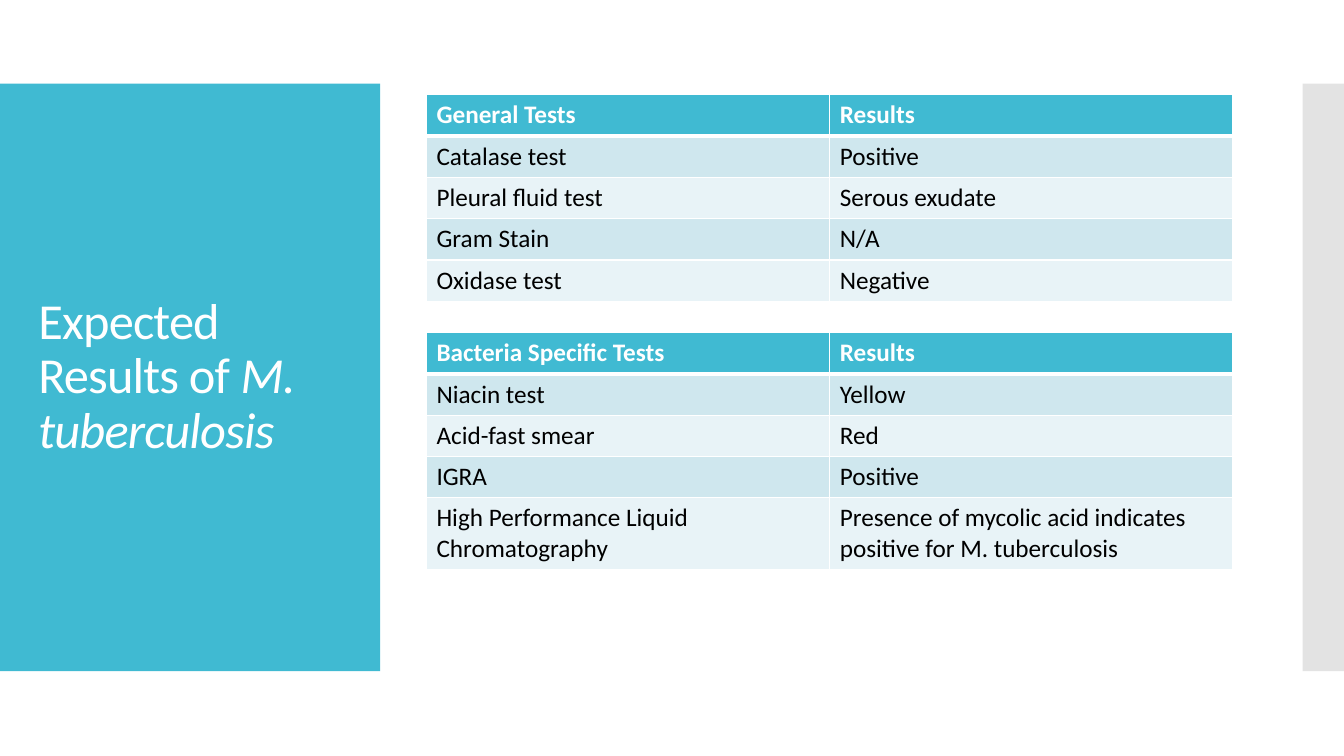
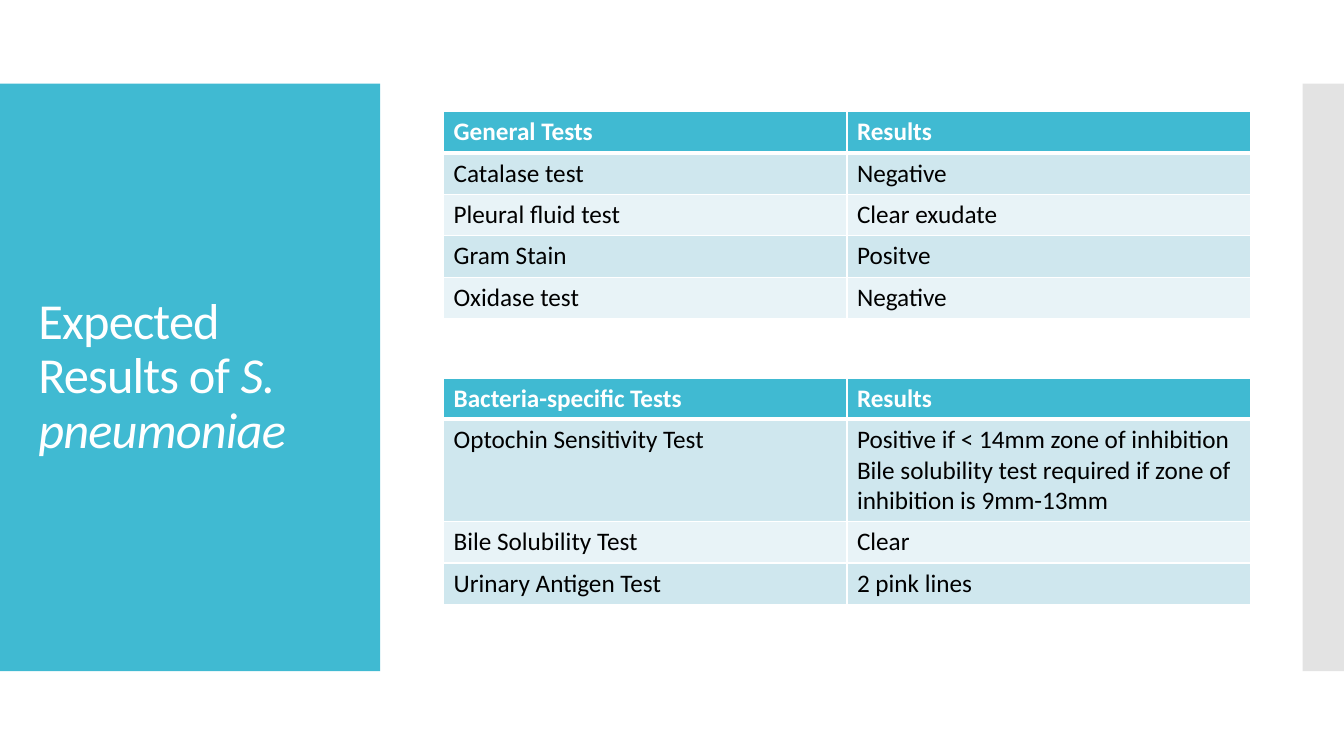
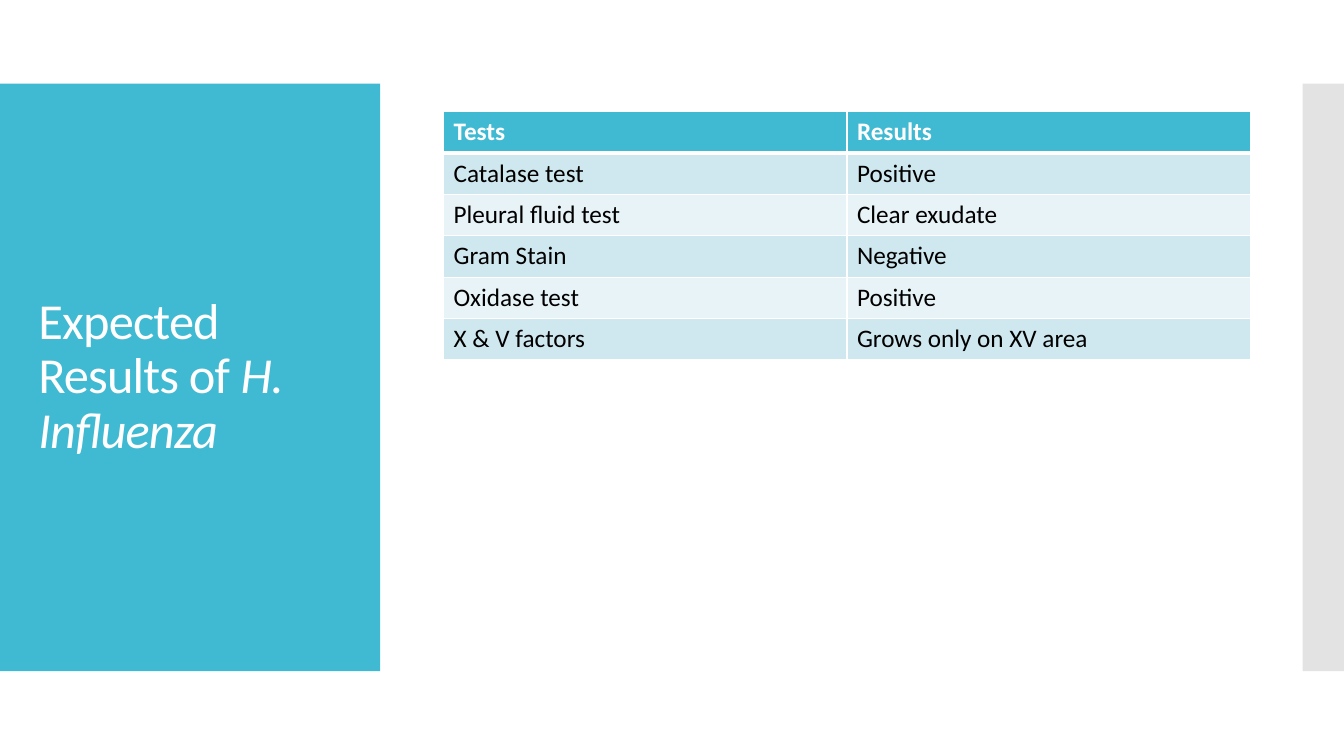
"""Build three slides of expected laboratory results, one for each bacterium."""
from lxml.etree import SubElement
from pptx import Presentation
from pptx.dml.color import RGBColor
from pptx.enum.shapes import MSO_SHAPE
from pptx.enum.text import MSO_ANCHOR, PP_ALIGN
from pptx.oxml import parse_xml
from pptx.oxml.ns import nsdecls, qn
from pptx.util import Inches, Pt

COLORS = {"teal": "40BAD2", "grey": "C8C8C8", "white": "FFFFFF", "black": "000000",
          "band_dark": "CFE7EE", "band_light": "E8F3F7"}
FONT = "Calibri"
ROW_H = 0.41
COL_W = 4

SLIDES = [
    ("M. tuberculosis", 3.44, [
        (4.23, 0.94, [
            ("General Tests", "Results"),
            ("Catalase test", "Positive"),
            ("Pleural fluid test", "Serous exudate"),
            ("Gram Stain", "N/A"),
            ("Oxidase test", "Negative")]),
        (4.23, 3.3, [
            ("Bacteria Specific Tests", "Results"),
            ("Niacin test", "Yellow"),
            ("Acid-fast smear", "Red"),
            ("IGRA", "Positive"),
            ("High Performance Liquid Chromatography",
             "Presence of mycolic acid indicates positive for M. tuberculosis")])]),
    ("S. pneumoniae", 3.22, [
        (4.4, 1.11, [
            ("General Tests", "Results"),
            ("Catalase test", "Negative"),
            ("Pleural fluid test", "Clear exudate"),
            ("Gram Stain", "Positve"),
            ("Oxidase test", "Negative")]),
        (4.4, 3.75, [
            ("Bacteria-specific Tests", "Results"),
            ("Optochin Sensitivity Test",
             "Positive if < 14mm zone of inhibition\n"
             "Bile solubility test required if zone of inhibition is 9mm-13mm"),
            ("Bile Solubility Test", "Clear"),
            ("Urinary Antigen Test", "2 pink lines")])]),
    ("H. Influenza", 3.22, [
        (4.4, 1.11, [
            ("Tests", "Results"),
            ("Catalase test", "Positive"),
            ("Pleural fluid test", "Clear exudate"),
            ("Gram Stain", "Negative"),
            ("Oxidase test", "Positive"),
            ("X & V factors", "Grows only on XV area")])]),
]


def add_run(p, text, size=18, color="black", bold=False, italic=False, spacing=None):
    r = p.add_run()
    r.text = text
    r.font.name = FONT
    r.font.size = Pt(size)
    r.font.bold = bold
    r.font.italic = italic
    r.font.color.rgb = RGBColor.from_string(COLORS[color])
    if spacing is not None:
        r.font._element.set("spc", str(round(spacing * 100)))


def set_borders(cell, **widths):
    tcPr = cell._tc.get_or_add_tcPr()
    for i, side in enumerate("LRTB"):
        tcPr.insert(i, parse_xml(
            f'<a:ln{side} {nsdecls("a")} w="{Pt(widths.get(side, 1))}"><a:solidFill>'
            f'<a:srgbClr val="{COLORS["white"]}"/></a:solidFill></a:ln{side}>'))


prs = Presentation()
prs.slide_width = Inches(13.33)
prs.slide_height = Inches(7.5)
layout = prs.slide_layouts[5]
slides = [prs.slides.add_slide(layout) for _ in SLIDES]

for i, (left, width, color, alpha) in enumerate([(0, 3.77, "teal", 100),
                                                 (12.92, 0.41, "grey", 50)]):
    sp = slides[0].shapes.add_shape(MSO_SHAPE.RECTANGLE, Inches(left), Inches(0.83),
                                    Inches(width), Inches(5.83))
    sp.shadow.inherit = False
    sp.fill.solid()
    sp.fill.fore_color.rgb = RGBColor.from_string(COLORS[color])
    sp.line.fill.background()
    if alpha < 100:
        clr = sp.element.spPr.find(qn("a:solidFill"))[0]
        SubElement(clr, qn("a:alpha")).set("val", str(alpha * 1000))
    sp.element.xpath(".//p:cNvPr")[0].set("id", str(20 + i))
    layout.shapes.element.insert(2 + i, sp.element)

for s, (species, title_w, tables) in zip(slides, SLIDES):
    title = s.shapes.title
    title.left, title.top = Inches(0.28), Inches(1.23)
    title.width, title.height = Inches(title_w), Inches(5.03)
    tf = title.text_frame
    tf.word_wrap = True
    tf.vertical_anchor = MSO_ANCHOR.MIDDLE
    p = tf.paragraphs[0]
    p.alignment = PP_ALIGN.LEFT
    p.line_spacing = 0.9
    add_run(p, "Expected Results of ", size=36, color="white", spacing=-0.6)
    add_run(p, species, size=36, color="white", italic=True, spacing=-0.6)

    for left, top, rows in tables:
        table = s.shapes.add_table(len(rows), 2, Inches(left), Inches(top),
                                   Inches(2 * COL_W), Inches(ROW_H * len(rows))).table
        for i, row in enumerate(rows):
            header = i == 0
            fill = "teal" if header else "band_dark" if i % 2 else "band_light"
            for j, text in enumerate(row):
                cell = table.cell(i, j)
                cell.fill.solid()
                cell.fill.fore_color.rgb = RGBColor.from_string(COLORS[fill])
                set_borders(cell, T=3 if i == 1 else 1, B=3 if header else 1)
                tf = cell.text_frame
                for k, line in enumerate(text.split("\n")):
                    p = tf.add_paragraph() if k else tf.paragraphs[0]
                    add_run(p, line, color="white" if header else "black", bold=header)

prs.save("out.pptx")
